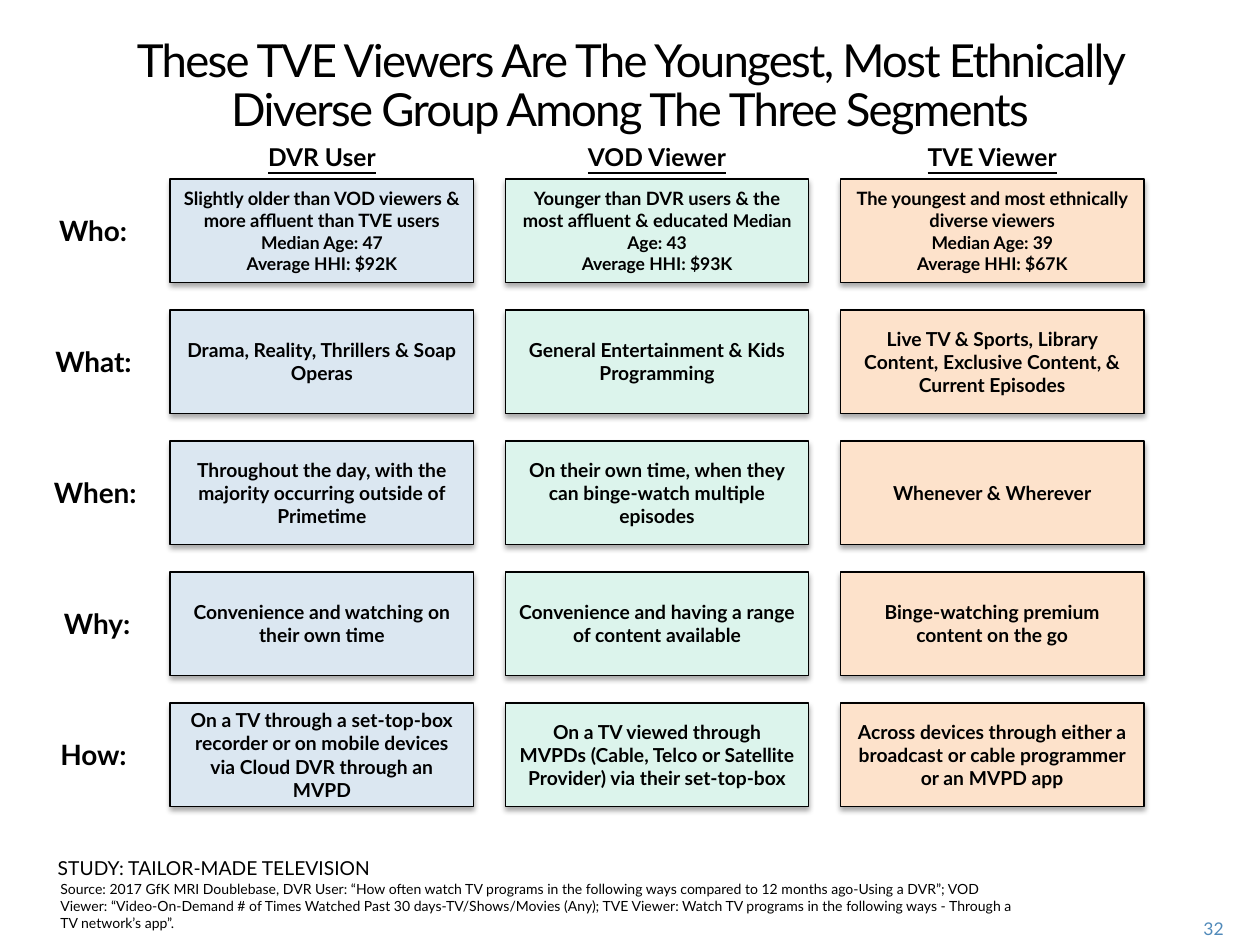
import dataclasses

import lxml.etree
import pptx
import pptx.dml.color
import pptx.enum.shapes
import pptx.enum.text
import pptx.oxml.ns
import pptx.util

Inches, Pt = pptx.util.Inches, pptx.util.Pt
ALIGN = pptx.enum.text.PP_ALIGN
ANCHOR = pptx.enum.text.MSO_ANCHOR


@dataclasses.dataclass(frozen=True)
class Theme:
    font: str = "Lato"
    ink: str = "000000"
    page_number: str = "508ABA"
    dvr: str = "DBE7F1"
    vod: str = "DCF4EC"
    tve: str = "FDE2CB"
    title_pt: float = 26
    row_pt: float = 16
    heading_pt: float = 14
    body_pt: float = 11
    lead_pt: float = 10.5
    fact_pt: float = 10
    source_pt: float = 8


THEME = Theme()

CARD_W, CARD_H = 2.41, 0.82
CARD_LEFT, CARD_TOP = 1.35, 1.42
COLUMN_PITCH, ROW_PITCH = 2.66, 1.04
HEADING_W, HEADING_H = 2, 0.34
LABEL_H = 0.37

ROW_LABELS = [
    ("Who:", 0.37, 0.81),
    ("What:", 0.34, 0.89),
    ("When:", 0.33, 0.89),
    ("Why:", 0.41, 0.73),
    ("How:", 0.38, 0.81),
]


def who(lead, *facts):
    """Paragraphs of (text, size) runs: a lead line, then smaller facts."""
    return [[(lead, THEME.lead_pt)]] + [[(fact, THEME.fact_pt)] for fact in facts]


def plain(text, size=THEME.body_pt):
    """One paragraph holding one run."""
    return [[(text, size)]]


SEGMENTS = [
    ("DVR User", THEME.dvr, [
        who("Slightly older than VOD viewers & more affluent than TVE users",
            "Median Age: 47", "Average HHI: $92K"),
        plain("Drama, Reality, Thrillers & Soap Operas"),
        plain("Throughout the day, with the majority occurring outside of Primetime"),
        plain("Convenience and watching on their own time"),
        plain("On a TV through a set-top-box recorder or on mobile devices "
              "via Cloud DVR through an MVPD"),
    ]),
    ("VOD Viewer", THEME.vod, [
        [[("Younger than DVR users & the most affluent & educated ", THEME.lead_pt),
          ("Median Age: 43", THEME.fact_pt)],
         [("Average HHI: $93K", THEME.fact_pt)]],
        plain("General Entertainment & Kids Programming"),
        plain("On their own time, when they can binge-watch multiple episodes"),
        plain("Convenience and having a range of content available"),
        plain("On a TV viewed through MVPDs (Cable, Telco or Satellite Provider) "
              "via their set-top-box"),
    ]),
    ("TVE Viewer", THEME.tve, [
        who("The youngest and most ethnically diverse viewers",
            "Median Age: 39", "Average HHI: $67K"),
        plain("Live TV & Sports, Library Content, Exclusive Content, & Current Episodes"),
        plain("Whenever & Wherever"),
        plain("Binge-watching premium content on the go"),
        plain("Across devices through either a broadcast or cable programmer "
              "or an MVPD app"),
    ]),
]


class SlideBuilder:
    """Holds the theme and the slide being built."""

    def __init__(self, slide, theme):
        self.s = slide
        self.theme = theme

    def color(self, value):
        return pptx.dml.color.RGBColor.from_string(value)

    def fill_text(self, tf, paragraphs, align=ALIGN.LEFT, color=None, **style):
        for i, runs in enumerate(paragraphs):
            p = tf.paragraphs[0] if i == 0 else tf.add_paragraph()
            p.alignment = align
            for text, size in runs:
                r = p.add_run()
                r.text = text
                font = {"name": self.theme.font, "size": Pt(size), **style}
                for name, value in font.items():
                    setattr(r.font, name, value)
                r.font.color.rgb = self.color(color or self.theme.ink)

    def title(self, text, left, top, width, height):
        sp = self.s.shapes.title
        box = {"left": left, "top": top, "width": width, "height": height}
        for name, value in box.items():
            setattr(sp, name, Inches(value))
        tf = sp.text_frame
        tf.auto_size = pptx.enum.text.MSO_AUTO_SIZE.NONE
        tf.vertical_anchor = ANCHOR.TOP
        self.fill_text(tf, plain(text, self.theme.title_pt), ALIGN.CENTER)
        p = tf.paragraphs[0]
        p.line_spacing = Pt(28)
        p.runs[0].font._element.set("spc", "-100")

    def text(self, text, size, left, top, width, height, wrap=True,
             anchor=ANCHOR.TOP, **style):
        sp = self.s.shapes.add_textbox(*map(Inches, (left, top, width, height)))
        tf = sp.text_frame
        tf.word_wrap = wrap
        tf.vertical_anchor = anchor
        self.fill_text(tf, plain(text, size), **style)

    def card(self, paragraphs, fill, left, top):
        sp = self.s.shapes.add_shape(
            pptx.enum.shapes.MSO_SHAPE.RECTANGLE,
            *map(Inches, (left, top, CARD_W, CARD_H)))
        sp.fill.solid()
        sp.fill.fore_color.rgb = self.color(fill)
        sp.line.color.rgb = self.color(self.theme.ink)
        sp.line.width = Pt(0.75)
        self.drop_shadow(sp)
        tf = sp.text_frame
        tf.word_wrap = True
        tf.vertical_anchor = ANCHOR.MIDDLE
        self.fill_text(tf, paragraphs, ALIGN.CENTER, bold=True)

    def drop_shadow(self, sp):
        sp.shadow.inherit = False
        qn = pptx.oxml.ns.qn
        effects = sp._element.spPr.find(qn("a:effectLst"))
        shadow = lxml.etree.SubElement(
            effects, qn("a:outerShdw"), blurRad=str(Pt(3.1)), dist=str(Pt(1.8)),
            dir="5400000", rotWithShape="0")
        tint = lxml.etree.SubElement(shadow, qn("a:srgbClr"), val=self.theme.ink)
        lxml.etree.SubElement(tint, qn("a:alpha"), val="35000")


def main():
    prs = pptx.Presentation()
    prs.slide_width, prs.slide_height = Inches(10), Inches(7.5)
    b = SlideBuilder(prs.slides.add_slide(prs.slide_layouts[5]), THEME)

    b.title("These TVE Viewers Are The Youngest, Most Ethnically Diverse Group "
            "Among The Three Segments", 0.4, 0.25, 9.2, 0.5)

    for column, (heading, fill, cards) in enumerate(SEGMENTS):
        left = CARD_LEFT + column * COLUMN_PITCH
        b.text(heading, THEME.heading_pt, left + (CARD_W - HEADING_W) / 2,
               CARD_TOP - HEADING_H, HEADING_W, HEADING_H,
               align=ALIGN.CENTER, bold=True, underline=True)
        for row, paragraphs in enumerate(cards):
            b.card(paragraphs, fill, left, CARD_TOP + row * ROW_PITCH)

    for row, (label, left, width) in enumerate(ROW_LABELS):
        top = CARD_TOP + row * ROW_PITCH + (CARD_H - LABEL_H) / 2
        b.text(label, THEME.row_pt, left, top, width, LABEL_H, wrap=False,
               anchor=ANCHOR.MIDDLE, bold=True)

    b.text("STUDY: TAILOR-MADE TELEVISION", THEME.body_pt, 0.36, 6.75, 3.08, 0.47)
    b.text("Source: 2017 GfK MRI Doublebase, DVR User: “How often watch TV programs "
           "in the following ways compared to 12 months ago-Using a DVR”; VOD Viewer: "
           "“Video-On-Demand # of Times Watched Past 30 days-TV/Shows/Movies (Any); "
           "TVE Viewer: Watch TV programs in the following ways - Through a TV "
           "network’s app”.", THEME.source_pt, 0.38, 6.94, 7.79, 0.5)
    b.text("32", THEME.fact_pt, 9.2, 7.24, 0.61, 0.25,
           align=ALIGN.RIGHT, color=THEME.page_number)

    prs.save("out.pptx")


if __name__ == "__main__":
    main()
